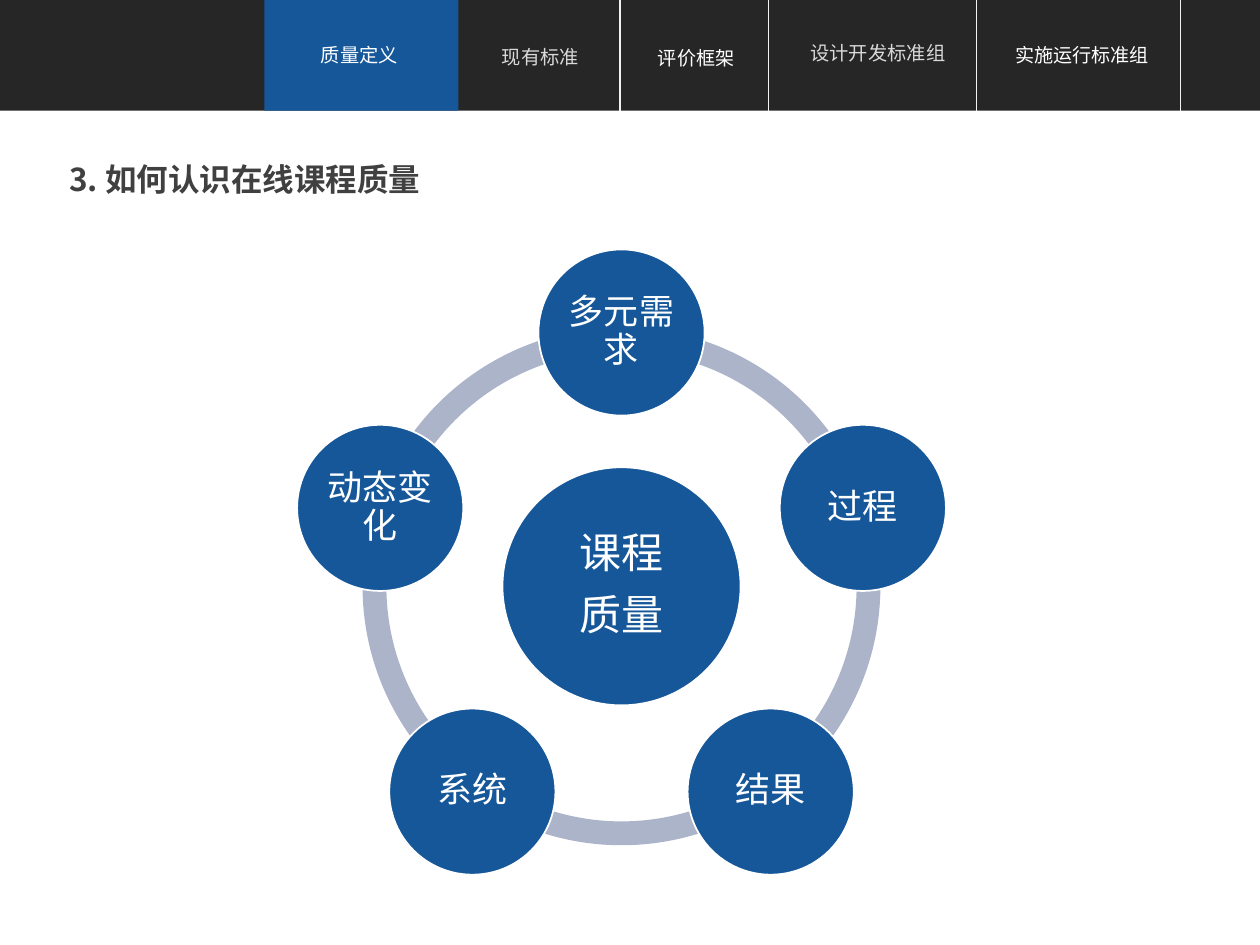
from math import cos, radians, sin

from lxml.etree import SubElement
from pptx import Presentation
from pptx.dml.color import RGBColor
from pptx.enum.shapes import MSO_CONNECTOR, MSO_SHAPE
from pptx.enum.text import MSO_ANCHOR, MSO_AUTO_SIZE, PP_ALIGN
from pptx.oxml.ns import qn
from pptx.util import Cm, Pt

DARK = RGBColor(0x26, 0x26, 0x26)
BLUE = RGBColor(0x16, 0x57, 0x99)
RING = RGBColor(0xAC, 0xB4, 0xCA)
WHITE = RGBColor(0xFF, 0xFF, 0xFF)
MUTED = RGBColor(0xD9, 0xD9, 0xD9)
DIVIDER = RGBColor(0xF2, 0xF2, 0xF2)
HEADING = RGBColor(0x40, 0x40, 0x40)
CJK_FONT = "Noto Sans CJK SC"
NODE_FONT = "Arial"

TABS = [
    ("质量定义", 5.51, 0.74, 3.48, 11, WHITE),
    ("现有标准", 9.04, 0.79, 3.71, 11, MUTED),
    ("评价框架", 12.17, 0.81, 3.73, 10.9, WHITE),
    ("设计开发标准组", 15.72, 0.71, 3.96, 11, MUTED),
    ("实施运行标准组", 20.19, 0.74, 3.25, 10.9, WHITE),
]
DIVIDERS = [12.5, 15.49, 19.69, 23.8]
NODES = ["多元需求", "过程", "结果", "系统", "动态变化"]


def add_span(para, text, size, color, font, bold=False):
    """Add one formatted run to a paragraph."""
    span = para.add_run()
    span.text = text
    span.font.size = Pt(size)
    span.font.bold = bold
    span.font.name = font
    span.font.color.rgb = color
    SubElement(span.font._element, qn("a:ea")).set("typeface", font)


def set_insets(frame, horizontal, vertical):
    """Set the inner margins of a text frame in centimetres."""
    frame.margin_left = frame.margin_right = Cm(horizontal)
    frame.margin_top = frame.margin_bottom = Cm(vertical)


def add_filled(shapes, kind, left, top, width, height, color):
    """Add a preset shape with a flat fill and no outline."""
    shape = shapes.add_shape(kind, Cm(left), Cm(top), Cm(width), Cm(height))
    shape.shadow.inherit = False
    shape.fill.solid()
    shape.fill.fore_color.rgb = color
    shape.line.fill.background()
    return shape


def add_navigation(page, width, height):
    """Draw the navigation bar with its active tab, labels and dividers."""
    add_filled(page.shapes, MSO_SHAPE.RECTANGLE, 0, 0, width, height, DARK)
    add_filled(page.shapes, MSO_SHAPE.RECTANGLE, 5.33, 0, 3.91, height, BLUE)
    for text, left, top, tab_width, size, color in TABS:
        box = page.shapes.add_textbox(Cm(left), Cm(top), Cm(tab_width), Cm(0.71))
        frame = box.text_frame
        frame.word_wrap = True
        frame.auto_size = MSO_AUTO_SIZE.SHAPE_TO_FIT_TEXT
        set_insets(frame, 0, 0.13)
        para = frame.paragraphs[0]
        para.alignment = PP_ALIGN.CENTER
        add_span(para, text, size, color, CJK_FONT)
    for x in DIVIDERS:
        line = page.shapes.add_connector(
            MSO_CONNECTOR.STRAIGHT, Cm(x), Cm(0), Cm(x), Cm(height)
        )
        line.line.color.rgb = DIVIDER
        line.line.width = Pt(0.75)
        SubElement(line._element.spPr, qn("a:effectLst"))


def add_title(page, left, top, width, height):
    """Place and format the title placeholder."""
    title = page.shapes.title
    title.left, title.top = Cm(left), Cm(top)
    title.width, title.height = Cm(width), Cm(height)
    frame = title.text_frame
    frame.word_wrap = True
    frame.auto_size = MSO_AUTO_SIZE.SHAPE_TO_FIT_TEXT
    frame.vertical_anchor = MSO_ANCHOR.TOP
    para = frame.paragraphs[0]
    para.alignment = PP_ALIGN.LEFT
    add_span(para, "3. 如何认识在线课程质量", 18, HEADING, CJK_FONT, bold=True)


def add_circle(shapes, center_x, center_y, diameter, lines, size):
    """Draw a labelled circle around a centre point."""
    left, top = center_x - diameter / 2, center_y - diameter / 2
    circle = add_filled(shapes, MSO_SHAPE.OVAL, left, top, diameter, diameter, BLUE)
    circle.line.color.rgb = WHITE
    circle.line.width = Pt(1)
    frame = circle.text_frame
    frame.word_wrap = True
    frame.vertical_anchor = MSO_ANCHOR.MIDDLE
    set_insets(frame, 0.08, 0.08)
    for index, text in enumerate(lines):
        para = frame.add_paragraph() if index else frame.paragraphs[0]
        para.alignment = PP_ALIGN.CENTER
        para.line_spacing = 0.9
        para.space_after = Pt(size * 0.4)
        add_span(para, text, size, WHITE, NODE_FONT)


def add_cycle(page, left, top, diameter):
    """Draw the ring of arcs, the central circle and the nodes around it."""
    shapes = page.shapes.add_group_shape().shapes
    center_x, center_y = left + diameter / 2, top + diameter / 2
    step = 360 / len(NODES)
    angles = [270 + step * index for index in range(len(NODES))]
    for angle in angles:
        arc = add_filled(
            shapes, MSO_SHAPE.BLOCK_ARC, left, top, diameter, diameter, RING
        )
        arc.adjustments[0] = angle % 360 * 0.6
        arc.adjustments[1] = (angle + step) % 360 * 0.6
        arc.adjustments[2] = 0.046
    add_circle(shapes, center_x, center_y, 4.8, ["课程", "质量"], 24)
    orbit = diameter * 0.49
    for angle, text in zip(angles, NODES):
        x = center_x + orbit * cos(radians(angle))
        y = center_y + orbit * sin(radians(angle))
        add_circle(shapes, x, y, 3.35, [text], 20)


def main():
    """Build the slide and save the deck."""
    deck = Presentation()
    deck.slide_width, deck.slide_height = Cm(25.4), Cm(19.05)
    page = deck.slides.add_slide(deck.slide_layouts[5])
    add_navigation(page, 25.4, 2.23)
    add_title(page, 1.14, 3.1, 22.78, 1.02)
    add_cycle(page, 7.31, 6.6, 10.44)
    deck.save("out.pptx")


if __name__ == "__main__":
    main()
